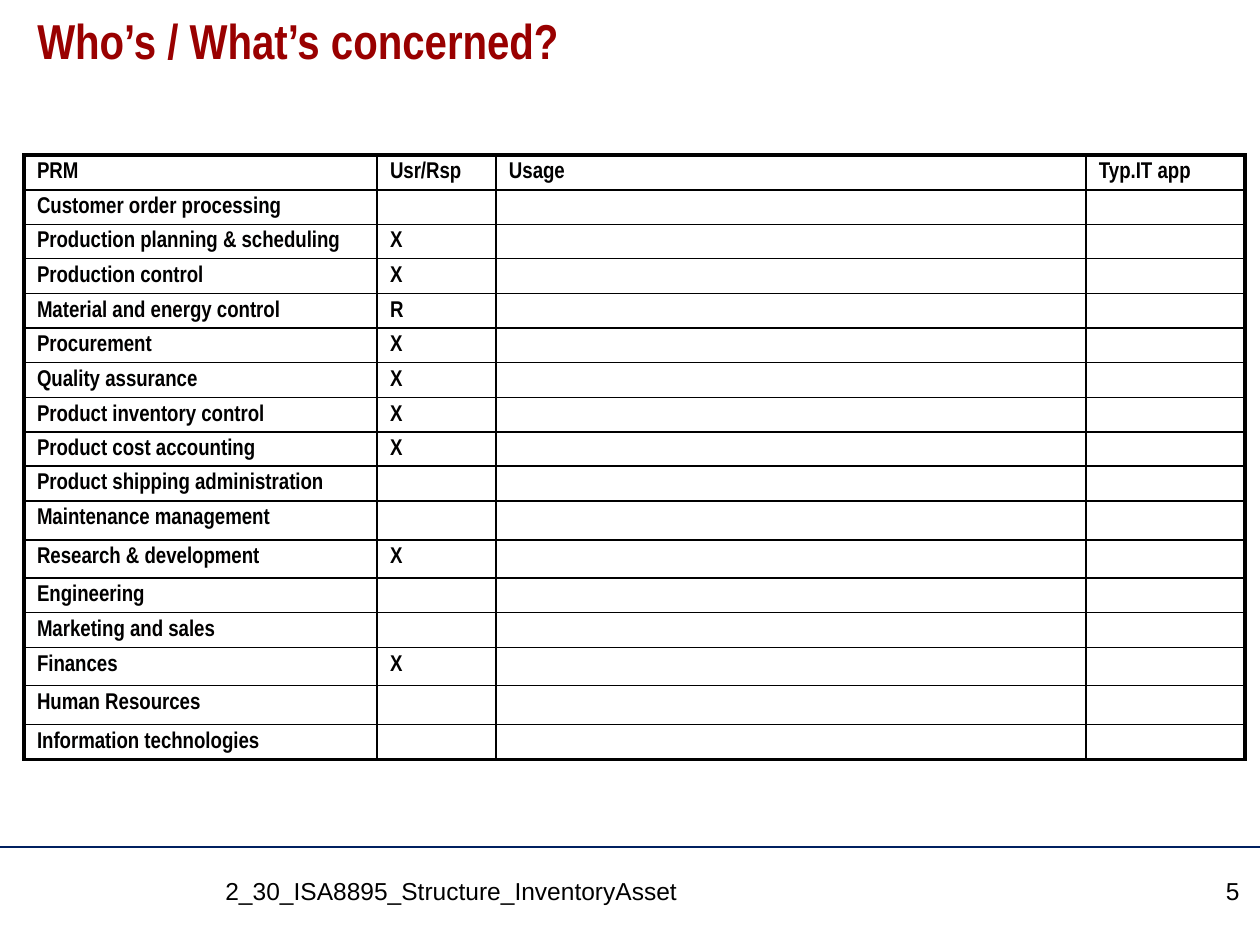
import pptx
import pptx.dml.color
import pptx.enum.shapes
import pptx.enum.text
import pptx.oxml
import pptx.oxml.ns
import pptx.util

EMU_PER_PX = 914400 / 126
COLORS = {"title": "990000", "cell": "010000", "border": "000000",
          "footer": "000000", "rule": "002060", "background": "FFFFFF"}
HEADERS = ["PRM", "Usr/Rsp", "Usage", "Typ.IT app"]
ACTIVITIES = [
    ("Customer order processing", ""),
    ("Production planning & scheduling", "X"),
    ("Production control", "X"),
    ("Material and energy control", "R"),
    ("Procurement", "X"),
    ("Quality assurance", "X"),
    ("Product inventory control", "X"),
    ("Product cost accounting", "X"),
    ("Product shipping administration", ""),
    ("Maintenance management", ""),
    ("Research & development", "X"),
    ("Engineering", ""),
    ("Marketing and sales", ""),
    ("Finances", "X"),
    ("Human Resources", ""),
    ("Information technologies", ""),
]
COLUMN_WIDTHS = [353, 119, 590, 159]
ROW_HEIGHTS = [35, 34, 34, 35, 34, 34, 35, 34, 34, 35, 39, 38, 34, 35, 38, 39, 35]
CELL_FONT, CELL_SIZE = "Arial Narrow", 13
OUTER_WIDTH, INNER_WIDTH = 2.25, 1


def px(length):
    return pptx.util.Emu(round(length * EMU_PER_PX))


def color(name):
    return pptx.dml.color.RGBColor.from_string(COLORS[name])


def add_run(paragraph, text, size, font_name, color_name, bold=False):
    run = paragraph.add_run()
    run.text = text
    run.font.size = pptx.util.Pt(size)
    run.font.name = font_name
    run.font.bold = bold
    run.font.color.rgb = color(color_name)


def add_text(slide, box, text, size, font_name, color_name, bold=False,
             alignment=pptx.enum.text.PP_ALIGN.LEFT, line_spacing=1.0):
    shape = slide.shapes.add_textbox(*map(px, box))
    shape.text_frame.word_wrap = True
    paragraph = shape.text_frame.paragraphs[0]
    paragraph.alignment = alignment
    paragraph.line_spacing = line_spacing
    add_run(paragraph, text, size, font_name, color_name, bold)


def add_border(cell, side, width):
    namespace = pptx.oxml.ns.nsdecls("a")
    border = pptx.oxml.parse_xml(
        f'<a:{side} {namespace} w="{pptx.util.Pt(width)}"><a:solidFill>'
        f'<a:srgbClr val="{COLORS["border"]}"/></a:solidFill></a:{side}>')
    cell._tc.get_or_add_tcPr().append(border)


def fill_cell(cell, text, border_widths):
    cell.margin_left = cell.margin_right = px(13)
    cell.margin_top = px(7)
    cell.margin_bottom = px(0)
    paragraph = cell.text_frame.paragraphs[0]
    if text:
        add_run(paragraph, text, CELL_SIZE, CELL_FONT, "cell", True)
    else:
        paragraph._p.append(pptx.oxml.parse_xml(
            f'<a:endParaRPr {pptx.oxml.ns.nsdecls("a")} sz="{CELL_SIZE * 100}">'
            f'<a:latin typeface="{CELL_FONT}"/></a:endParaRPr>'))
    for side, width in border_widths.items():
        add_border(cell, side, width)
    cell.fill.background()


def add_activity_table(slide, left, top):
    rows = [HEADERS] + [[name, role, "", ""] for name, role in ACTIVITIES]
    frame = slide.shapes.add_table(
        len(rows), len(HEADERS), px(left), px(top),
        px(sum(COLUMN_WIDTHS)), px(sum(ROW_HEIGHTS)))
    table = frame.table
    table.horz_banding = False
    for column, width in zip(table.columns, COLUMN_WIDTHS):
        column.width = px(width)
    for row, height in zip(table.rows, ROW_HEIGHTS):
        row.height = px(height)
    for i, texts in enumerate(rows):
        for j, text in enumerate(texts):
            on_edge = {"lnL": j == 0, "lnR": j == len(HEADERS) - 1,
                       "lnT": i == 0, "lnB": i == len(rows) - 1}
            widths = {side: OUTER_WIDTH if outer else INNER_WIDTH
                      for side, outer in on_edge.items()}
            fill_cell(table.cell(i, j), text, widths)


def add_footer(slide, left, top, width):
    rule = slide.shapes.add_connector(
        pptx.enum.shapes.MSO_CONNECTOR.STRAIGHT,
        px(left), px(top), px(left + width), px(top))
    rule.line.color.rgb = color("rule")
    rule.line.width = pptx.util.Pt(0.75)
    rule._element.spPr.append(pptx.oxml.parse_xml(
        f'<a:effectLst {pptx.oxml.ns.nsdecls("a")}/>'))
    add_text(slide, (left + 213, top + 23, 908, 57),
             "2_30_ISA8895_Structure_InventoryAsset", 14, "Arial", "footer")
    add_text(slide, (left + 1136, top + 23, 116, 57), "5", 14, "Arial", "footer",
             alignment=pptx.enum.text.PP_ALIGN.RIGHT)


def main():
    presentation = pptx.Presentation()
    presentation.slide_width = px(1260)
    presentation.slide_height = px(945)
    slide = presentation.slides.add_slide(presentation.slide_layouts[6])
    slide.background.fill.solid()
    slide.background.fill.fore_color.rgb = color("background")
    add_text(slide, (25, 11, 1211, 105), "Who’s / What’s concerned?", 28,
             "Arial Narrow", "title", bold=True, line_spacing=0.9)
    add_activity_table(slide, 24, 155)
    add_footer(slide, 0, 847, 1260)
    presentation.save("out.pptx")


if __name__ == "__main__":
    main()
